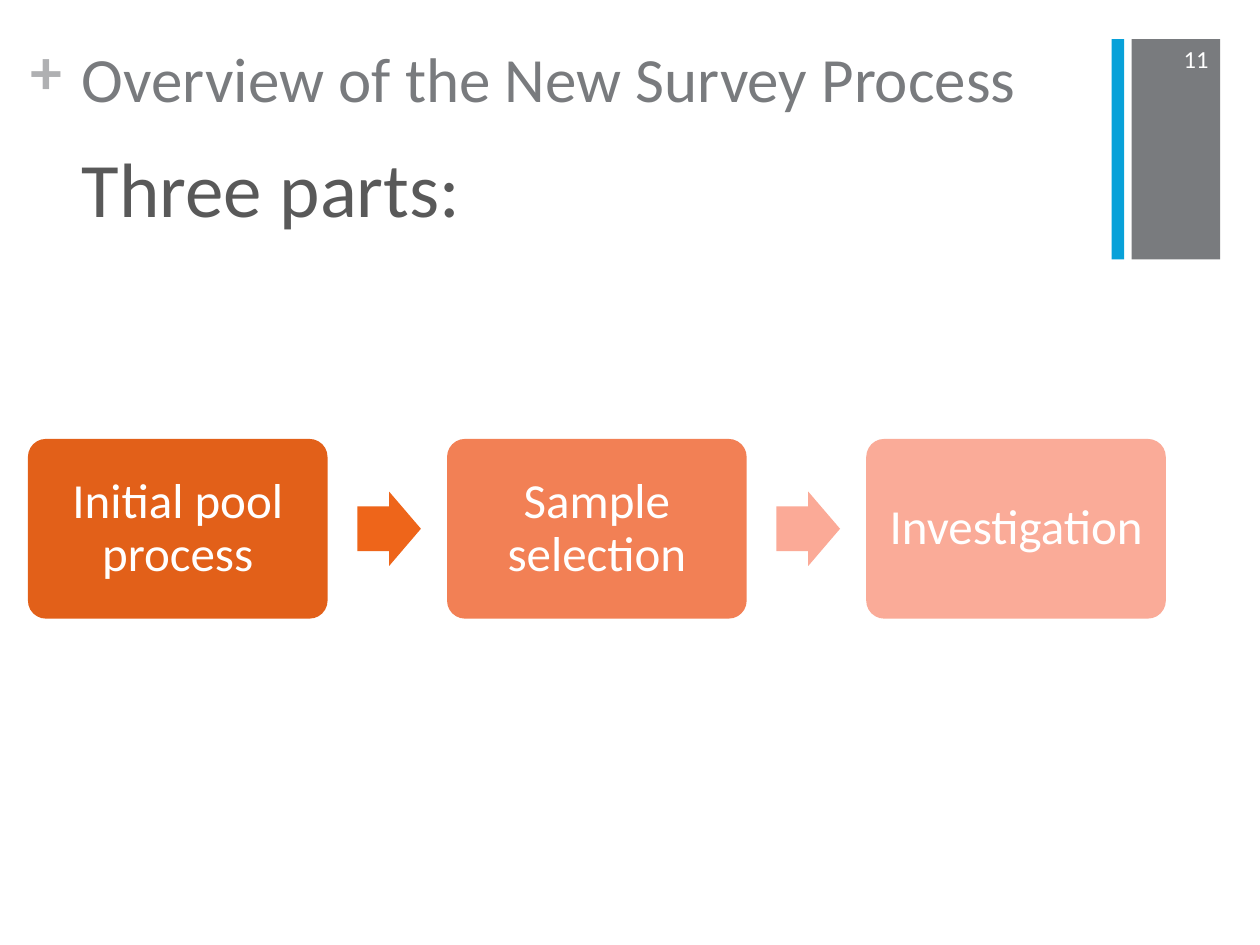
from lxml import etree
from pptx import Presentation
from pptx.dml.color import RGBColor
from pptx.enum import shapes, text
from pptx.oxml.ns import qn
from pptx.util import Pt

FONT = "Calibri"
WHITE = RGBColor(0xFF, 0xFF, 0xFF)
GRAY = RGBColor(0x79, 0x7B, 0x7E)
LIGHT_GRAY = RGBColor(0xAF, 0xB0, 0xB2)
DARK_GRAY = RGBColor(0x59, 0x59, 0x59)
BLUE = RGBColor(0x08, 0xA1, 0xD9)

# Each step: label, box colour, colour of the arrow that follows
STEPS = [
    ("Initial pool process", RGBColor(0xE2, 0x60, 0x19), RGBColor(0xEE, 0x65, 0x1A)),
    ("Sample selection", RGBColor(0xF2, 0x80, 0x55), RGBColor(0xFB, 0xAA, 0x97)),
    ("Investigation", RGBColor(0xFA, 0xAB, 0x98), None),
]
STEP_LEFT, STEP_TOP, STEP_W, STEP_H = 16, 250.8, 171.2, 102.7
STEP_INSET = 6  # the rounded corners add their own inset
PITCH = 239.5
ARROW_OFFSET, ARROW_W, ARROW_H = 188.2, 36.3, 42.5


def place(sp, left, top, width, height):
    sp.left, sp.top, sp.width, sp.height = Pt(left), Pt(top), Pt(width), Pt(height)


def write(sp, words, size, color, align=text.PP_ALIGN.LEFT,
          anchor=text.MSO_ANCHOR.TOP, bold=False):
    tf = sp.text_frame
    tf.word_wrap = True
    tf.auto_size = text.MSO_AUTO_SIZE.NONE
    tf.vertical_anchor = anchor
    p = tf.paragraphs[0]
    p.alignment = align
    r = p.add_run()
    r.text = words
    r.font.name, r.font.size, r.font.bold = FONT, Pt(size), bold
    r.font.color.rgb = color
    return p


def set_insets(tf, inset):
    tf.margin_left = tf.margin_right = tf.margin_top = tf.margin_bottom = Pt(inset)


def add_block(s, kind, left, top, width, height, color):
    sp = s.shapes.add_shape(kind, Pt(left), Pt(top), Pt(width), Pt(height))
    sp.shadow.inherit = False
    sp.fill.solid()
    sp.fill.fore_color.rgb = color
    sp.line.fill.background()
    return sp


def add_label(s, left, top, width, height):
    return s.shapes.add_textbox(Pt(left), Pt(top), Pt(width), Pt(height))


def add_step(s, left, label, color):
    sp = add_block(s, shapes.MSO_SHAPE.ROUNDED_RECTANGLE,
                   left, STEP_TOP, STEP_W, STEP_H, color)
    sp.adjustments[0] = 0.1
    set_insets(sp.text_frame, STEP_INSET)
    p = write(sp, label, 28, WHITE, text.PP_ALIGN.CENTER, text.MSO_ANCHOR.MIDDLE)
    p.line_spacing = 0.9


def add_arrow(s, left, color):
    top = STEP_TOP + (STEP_H - ARROW_H) / 2
    sp = add_block(s, shapes.MSO_SHAPE.RIGHT_ARROW, left, top, ARROW_W, ARROW_H, color)
    sp.adjustments[0], sp.adjustments[1] = 0.6, 0.5


def add_decoration(s):
    add_block(s, shapes.MSO_SHAPE.RECTANGLE, 646.6, 22.3, 50.6, 126, GRAY)
    add_block(s, shapes.MSO_SHAPE.RECTANGLE, 635.2, 22.3, 7.2, 126, BLUE)
    plus = add_label(s, 17.3, 18, 21, 44)
    set_insets(plus.text_frame, 0)
    write(plus, "+", 36, LIGHT_GRAY, bold=True)
    number = add_label(s, 653.8, 19, 43.9, 28.8)
    write(number, "11", 14, WHITE, text.PP_ALIGN.RIGHT, text.MSO_ANCHOR.MIDDLE)


def fill_placeholders(s):
    title, body = s.shapes.title, s.placeholders[1]
    place(title, 39.6, 18.7, 594.7, 87.8)
    write(title, "Overview of the New Survey Process", 36, GRAY)
    place(body, 39.6, 76.7, 594.7, 423.4)
    p = write(body, "Three parts:", 44, DARK_GRAY)
    p.space_before = Pt(20)
    # No bullet or hanging indent
    pPr = p._p.get_or_add_pPr()
    pPr.set("marL", "0")
    pPr.set("indent", "0")
    etree.SubElement(pPr, qn("a:buNone"))


def main():
    prs = Presentation()
    prs.slide_width, prs.slide_height = Pt(720), Pt(540)
    s = prs.slides.add_slide(prs.slide_layouts[1])

    # Heading and page furniture
    fill_placeholders(s)
    add_decoration(s)

    # Process flow
    for i, (label, color, arrow_color) in enumerate(STEPS):
        left = STEP_LEFT + i * PITCH
        add_step(s, left, label, color)
        if arrow_color is not None:
            add_arrow(s, left + ARROW_OFFSET, arrow_color)

    prs.save("out.pptx")


if __name__ == "__main__":
    main()
